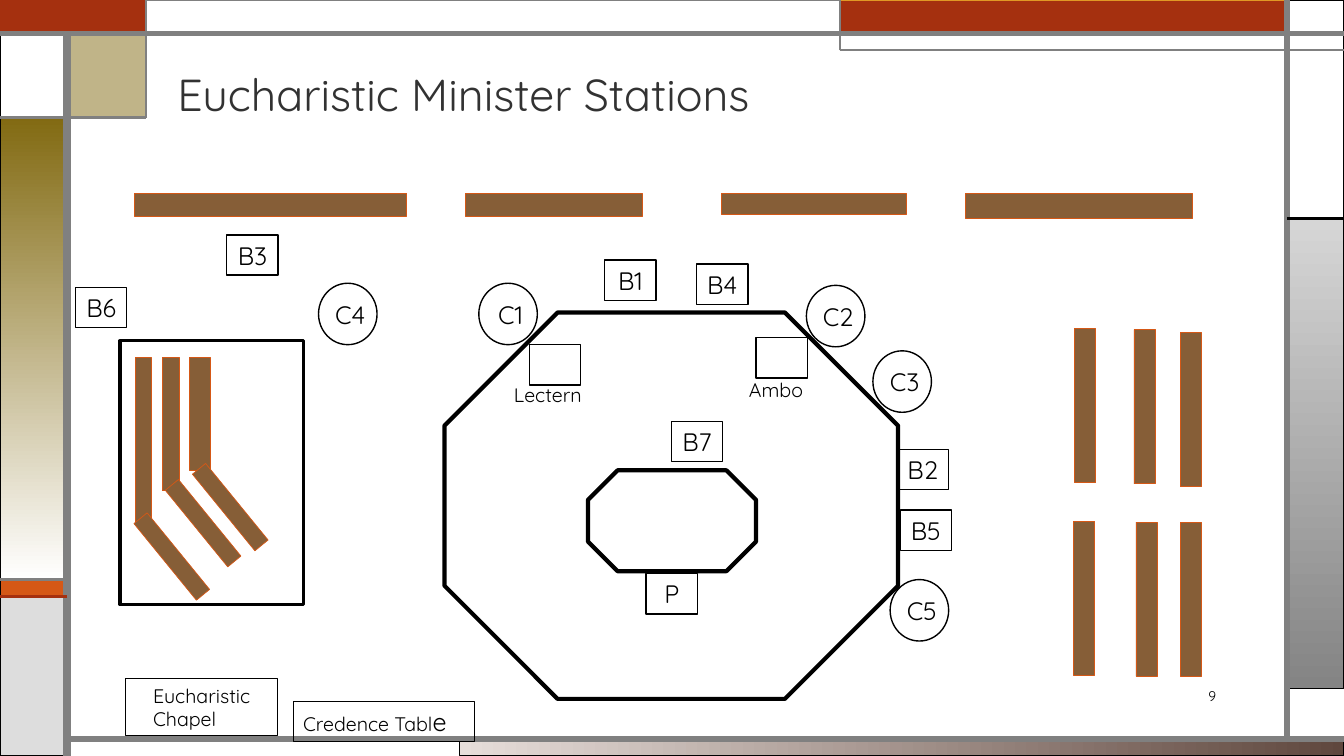
from lxml import etree
from pptx import Presentation
from pptx.dml.color import RGBColor
from pptx.enum.shapes import MSO_CONNECTOR, MSO_SHAPE
from pptx.enum.text import MSO_ANCHOR, MSO_AUTO_SIZE, PP_ALIGN
from pptx.oxml.ns import qn
from pptx.util import Pt

RECTANGLE, OVAL, OCTAGON = MSO_SHAPE.RECTANGLE, MSO_SHAPE.OVAL, MSO_SHAPE.OCTAGON
LEFT, CENTER, RIGHT = PP_ALIGN.LEFT, PP_ALIGN.CENTER, PP_ALIGN.RIGHT
FONT = "Quicksand"

BLACK = RGBColor(0x00, 0x00, 0x00)
WHITE = RGBColor(0xFF, 0xFF, 0xFF)
CHARCOAL = RGBColor(0x32, 0x32, 0x32)
GRAY = RGBColor(0x80, 0x80, 0x80)
PALE_GRAY = RGBColor(0xDD, 0xDD, 0xDD)
SILVER = RGBColor(0xD6, 0xD6, 0xD6)
STEEL = RGBColor(0x84, 0x84, 0x84)
BLUSH = RGBColor(0xE7, 0xDE, 0xDA)
UMBER = RGBColor(0x5F, 0x47, 0x3E)
RED = RGBColor(0xA5, 0x30, 0x0F)
ORANGE = RGBColor(0xD5, 0x58, 0x16)
AMBER = RGBColor(0xE1, 0x98, 0x25)
OLIVE = RGBColor(0x82, 0x6A, 0x12)
WOOD = RGBColor(0x86, 0x5E, 0x37)

WIDTH, HEIGHT = 960, 540
# Frame grid: column and row edges of the border panels
X1, X2, X3, X4 = 48, 104, 600, 919.5
Y1, Y2, Y3, Y4, Y5, Y6 = 24, 84, 156, 414, 426, 528

# Edges (left, top, right, bottom), fill, line colour, line width;
# a fill pair is a gradient followed by its angle
PANELS = [
    ((328, Y6, WIDTH, HEIGHT), (BLUSH, UMBER, 0), BLACK, 0.75),
    ((X4, Y3, WIDTH, 492), (SILVER, STEEL, 270), BLACK, 0.75),
    ((0, Y4, X1, Y5), ORANGE, BLACK, 0.75),
    ((0, Y5, X1, HEIGHT), PALE_GRAY, BLACK, 0.75),
    ((X4, 0, WIDTH, Y3), WHITE, BLACK, 0.75),
    ((X3, 0, X4, Y1), RED, AMBER, 0.75),
    ((0, Y2, X1, Y4), (OLIVE, WHITE, 270), BLACK, 0.75),
    ((0, Y1, X1, Y2), WHITE, BLACK, 0.75),
    ((0, 0, X2, Y1), RED, RED, 1.5),
    ((X2, 0, X3, Y1), WHITE, GRAY, 0.75),
]
RULES = [
    ((X1, HEIGHT, X1, Y1), GRAY, 6),
    ((X1, Y6, WIDTH, Y6), GRAY, 4.5),
    ((X4, Y6, X4, 0), GRAY, 4.5),
    ((0, Y1, WIDTH, Y1), GRAY, 3),
    ((WIDTH, 36, X3, 36), GRAY, 1.5),
    ((X3, 36, X3, 0), GRAY, 1.5),
    ((X4, Y3, WIDTH, Y3), BLACK, 2.25),
    ((X2, 0, X2, Y2), GRAY, 1.5),
    ((X2, Y2, 0, Y2), GRAY, 2.25),
    ((X1, Y4, 0, Y4), GRAY, 2.25),
    ((X1, Y5, 0, Y5), RED, 2.25),
]

# Floor plan outlines: shape, (left, top, width, height), line width
OUTLINES = [
    (OCTAGON, (317.5, 223.2, 324, 276), 3),
    (OCTAGON, (420, 336, 120, 72), 3),
    (RECTANGLE, (85.7, 243.4, 131, 188.6), 2.25),
]

BOX_SIZE = (36.7, 28.8)
BOXES = [  # label, left, top, line width
    ("P", 461.5, 409.7, 1), ("B1", 432, 185.8, 1), ("B6", 54, 205.2, 0.75),
    ("B5", 643, 364.3, 1), ("B3", 162, 167.8, 1), ("B4", 497.5, 188.6, 1),
    ("B2", 640.8, 321.1, 1), ("B7", 479.5, 301, 0.75),
    ("", 378, 246.2, 1), ("", 540, 241.2, 1),
]
CIRCLE_SIZE = (41.8, 43.9)
CIRCLES = [
    ("C4", 227.5, 202.3), ("C5", 635.8, 414), ("C3", 623.5, 250.6),
    ("C2", 576, 203.8), ("C1", 342, 202.3),
]

CHAPEL_PEWS = [(96.5, 255.6, 11.5, 118.8), (115.9, 255.6, 12.2, 95),
               (135.4, 255.6, 15.1, 80.6)]
SLANTED_PEW_SIZE, SLANT = (12.2, 70.6), 320.8
SLANTED_PEWS = [(139, 338.4), (116.6, 362.2), (158.4, 326.9)]
SIDE_PEW_SIZE = (15.1, 110.2)
SIDE_PEWS = [(843.1, 237.6), (843.1, 373), (811.4, 373),
             (766.8, 372.2), (767.5, 234.7), (810, 235.4)]
BACK_PEWS = [(689.8, 138.2, 162, 18), (96.1, 137.9, 194.4, 16.6),
             (332.6, 138.2, 126, 16.6), (515.5, 138.2, 131.8, 15.1)]

# Paragraphs, (left, top, width, height), size, alignment, left inset, framed
CAPTIONS = [
    (["9"], (797.8, 486, 77.8, 21.6), 10, RIGHT, 7.2, False),
    (["Ambo"], (527.8, 266.4, 56.9, 24.5), 14, LEFT, 7.2, False),
    (["Lectern"], (360, 270, 66.2, 24.5), 14, LEFT, 7.2, False),
    (["Eucharistic", "Chapel"], (90, 484.6, 108, 41), 14, LEFT, 19.4, True),
]


def add_outline(kind, box, line_color, line_width, fill=None):
    shape = slide.shapes.add_shape(kind, *map(Pt, box))
    shape.shadow.inherit = False
    shape.line.color.rgb = line_color
    shape.line.width = Pt(line_width)
    if fill is None:
        shape.fill.background()
    elif isinstance(fill, RGBColor):
        shape.fill.solid()
        shape.fill.fore_color.rgb = fill
    else:
        *colors, angle = fill
        shape.fill.gradient()
        shape.fill.gradient_angle = angle
        for stop, color in zip(shape.fill.gradient_stops, colors):
            stop.color.rgb = color
    return shape


def add_panel(edges, fill, line_color, line_width):
    left, top, right, bottom = edges
    box = (left, top, right - left, bottom - top)
    return add_outline(RECTANGLE, box, line_color, line_width, fill)


def add_rule(ends, color, width):
    rule = slide.shapes.add_connector(MSO_CONNECTOR.STRAIGHT, *map(Pt, ends))
    rule.line.color.rgb = color
    rule.line.width = Pt(width)
    etree.SubElement(rule._element.spPr, qn("a:effectLst"))


def add_pew(box, rotation=0):
    add_outline(RECTANGLE, box, ORANGE, 0.5, WOOD).rotation = rotation


def format_text(shape, size, alignment, color=BLACK, anchor=MSO_ANCHOR.MIDDLE):
    frame = shape.text_frame
    frame.vertical_anchor = anchor
    for paragraph in frame.paragraphs:
        paragraph.alignment = alignment
        for run in paragraph.runs:
            run.font.name = FONT
            run.font.size = Pt(size)
            run.font.color.rgb = color


def add_station(kind, label, box, line_width, left_inset=0):
    station = add_outline(kind, box, BLACK, line_width)
    if label:
        frame = station.text_frame
        frame.text = label
        frame.word_wrap = False
        frame.margin_left = Pt(left_inset)
        frame.margin_right = frame.margin_top = frame.margin_bottom = 0
        format_text(station, 18, CENTER)


def add_caption(lines, box, size, alignment, left_inset, framed):
    caption = slide.shapes.add_textbox(*map(Pt, box))
    frame = caption.text_frame
    frame.text = "\n".join(lines)
    frame.word_wrap = True
    frame.margin_left = Pt(left_inset)
    format_text(caption, size, alignment)
    if framed:
        caption.line.color.rgb = BLACK
        caption.line.width = Pt(0.75)
    return caption


presentation = Presentation()
presentation.slide_width, presentation.slide_height = Pt(WIDTH), Pt(HEIGHT)
slide = presentation.slides.add_slide(presentation.slide_layouts[5])

for panel in PANELS:
    add_panel(*panel)
tan_panel = add_panel((X1, Y1, X2, Y2), OLIVE, BLACK, 0.75)
tan_color = tan_panel._element.spPr.find(qn("a:solidFill"))[0]
etree.SubElement(tan_color, qn("a:alpha")).set("val", "50000")
for rule in RULES:
    add_rule(*rule)

title = slide.shapes.title
title.left, title.top, title.width, title.height = map(Pt, (119.5, 41.8, 756, 48.2))
title.text_frame.text = "Eucharistic Minister Stations"
title.text_frame.auto_size = MSO_AUTO_SIZE.NONE
title.text_frame.paragraphs[0].line_spacing = 0.9
format_text(title, 32, LEFT, CHARCOAL, MSO_ANCHOR.BOTTOM)

for kind, box, line_width in OUTLINES:
    add_outline(kind, box, BLACK, line_width)
for label, left, top, line_width in BOXES:
    add_station(RECTANGLE, label, (left, top, *BOX_SIZE), line_width)
for label, left, top in CIRCLES:
    add_station(OVAL, label, (left, top, *CIRCLE_SIZE), 1, left_inset=3.6)

for box in CHAPEL_PEWS + BACK_PEWS:
    add_pew(box)
for position in SLANTED_PEWS:
    add_pew(position + SLANTED_PEW_SIZE, SLANT)
for position in SIDE_PEWS:
    add_pew(position + SIDE_PEW_SIZE)

for caption in CAPTIONS:
    add_caption(*caption)
credence = add_caption(["Credence Tabl"], (209.5, 501.1, 129.6, 28.8), 14, LEFT, 7.2, True)
last_letter = credence.text_frame.paragraphs[0].add_run()
last_letter.text = "e"
last_letter.font.name, last_letter.font.size = FONT, Pt(18)
last_letter.font.color.rgb = BLACK

presentation.save("out.pptx")
